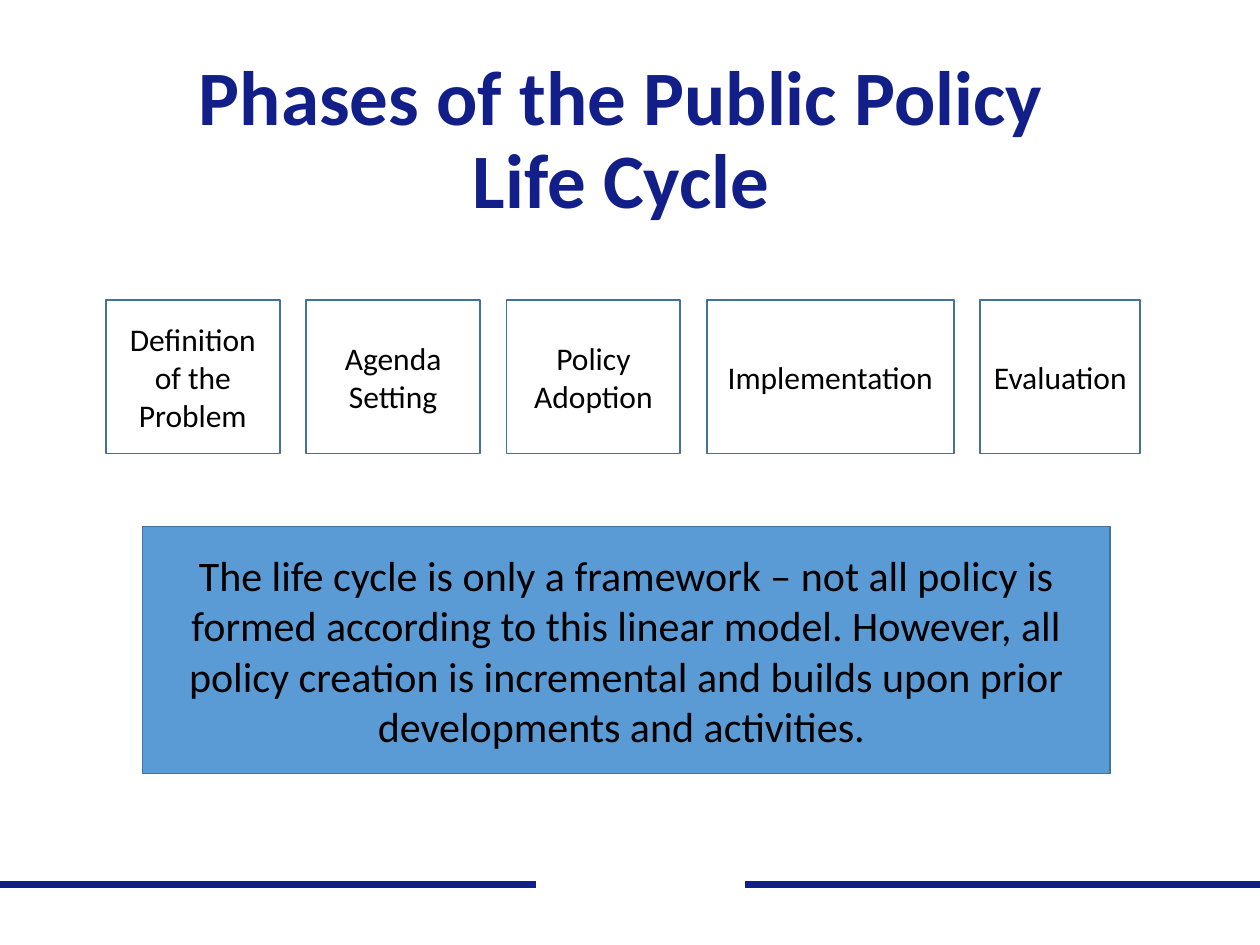
from dataclasses import dataclass

import pptx
import pptx.dml.color
import pptx.enum.shapes
import pptx.enum.text
import pptx.oxml.xmlchemy
import pptx.util
from pptx.util import Inches

NAVY = "121F88"
BLUE = "5B9BD5"
OUTLINE = "42719B"
BLACK = "000000"
FONT = "Calibri"


@dataclass
class Phase:
    name: str
    width: float


PHASES = [
    Phase("Definition of the Problem", 1.38),
    Phase("Agenda Setting", 1.38),
    Phase("Policy Adoption", 1.38),
    Phase("Implementation", 1.96),
    Phase("Evaluation", 1.27),
]
PHASE_LEFT, PHASE_TOP, PHASE_HEIGHT, PHASE_GAP = 0.84, 2.38, 1.22, 0.21
RULE_Y = 7.02
RULE_SPANS = [(0, 4.25), (5.91, 10)]


def color(value: str) -> pptx.dml.color.RGBColor:
    return pptx.dml.color.RGBColor.from_string(value)


def add_run(paragraph, text: str, size: float, ink: str, bold: bool = False) -> None:
    run = paragraph.add_run()
    run.text = text
    run.font.name = FONT
    run.font.size = pptx.util.Pt(size)
    run.font.bold = bold
    run.font.color.rgb = color(ink)


def center(frame):
    """Centre the frame's text both ways and return its first paragraph."""
    frame.word_wrap = True
    frame.auto_size = pptx.enum.text.MSO_AUTO_SIZE.NONE
    frame.vertical_anchor = pptx.enum.text.MSO_ANCHOR.MIDDLE
    paragraph = frame.paragraphs[0]
    paragraph.alignment = pptx.enum.text.PP_ALIGN.CENTER
    return paragraph


def add_box(slide, left: float, top: float, width: float, height: float,
            text: str, size: float, fill: str | None = None) -> None:
    box = slide.shapes.add_shape(
        pptx.enum.shapes.MSO_SHAPE.RECTANGLE,
        Inches(left), Inches(top), Inches(width), Inches(height))
    box.shadow.inherit = False
    if fill is None:
        box.fill.background()
    else:
        box.fill.solid()
        box.fill.fore_color.rgb = color(fill)
    box.line.color.rgb = color(OUTLINE)
    box.line.width = pptx.util.Pt(1)
    add_run(center(box.text_frame), text, size, BLACK)


def add_rule(slide, start: float, end: float) -> None:
    rule = slide.shapes.add_connector(
        pptx.enum.shapes.MSO_CONNECTOR.STRAIGHT,
        Inches(start), Inches(RULE_Y), Inches(end), Inches(RULE_Y))
    rule.line.color.rgb = color(NAVY)
    rule.line.width = pptx.util.Pt(4.5)
    rule._element.spPr.append(pptx.oxml.xmlchemy.OxmlElement("a:effectLst"))


def add_title(slide, lines: list[str]) -> None:
    title = slide.shapes.title
    title.left, title.top = Inches(0), Inches(0.4)
    title.width, title.height = Inches(10), Inches(1.45)
    paragraph = center(title.text_frame)
    paragraph.line_spacing = 0.9
    for index, line in enumerate(lines):
        if index:
            paragraph.add_line_break()
        add_run(paragraph, line, 44, NAVY, bold=True)


def main() -> None:
    deck = pptx.Presentation()
    deck.slide_width, deck.slide_height = Inches(10), Inches(7.5)
    slide = deck.slides.add_slide(deck.slide_layouts.get_by_name("Title Only"))

    for start, end in RULE_SPANS:
        add_rule(slide, start, end)
    add_title(slide, ["Phases of the Public Policy ", "Life Cycle "])
    add_box(slide, 1.13, 4.18, 7.68, 1.96,
            "The life cycle is only a framework – not all policy is formed "
            "according to this linear model. However, all policy creation is "
            "incremental and builds upon prior developments and activities. ",
            24, BLUE)

    left = PHASE_LEFT
    for phase in PHASES:
        add_box(slide, left, PHASE_TOP, phase.width, PHASE_HEIGHT, phase.name, 18)
        left += phase.width + PHASE_GAP

    deck.save("out.pptx")


if __name__ == "__main__":
    main()
